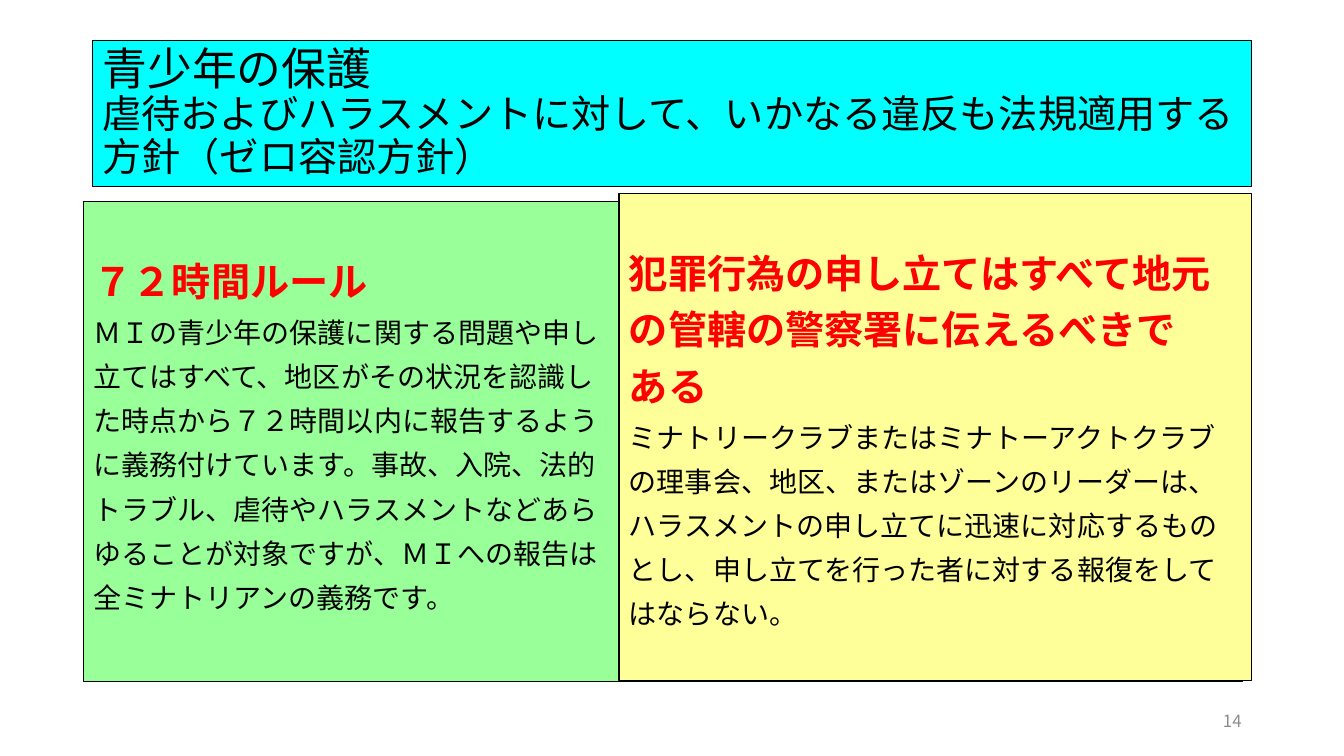
"""Build the youth protection slide with a title and two policy panels."""
from dataclasses import dataclass

from lxml.etree import SubElement
from pptx import Presentation
from pptx.dml.color import RGBColor
from pptx.enum.shapes import MSO_SHAPE
from pptx.enum.text import MSO_ANCHOR, MSO_AUTO_SIZE, PP_ALIGN
from pptx.oxml.ns import qn
from pptx.util import Cm, Pt

FONT = "Noto Sans CJK JP"
BLACK = RGBColor(0x00, 0x00, 0x00)
RED = RGBColor(0xFF, 0x00, 0x00)
CYAN = RGBColor(0x00, 0xFF, 0xFF)
GREEN = RGBColor(0x99, 0xFF, 0x99)
YELLOW = RGBColor(0xFF, 0xFF, 0x99)
GRAY = RGBColor(0x8C, 0x8C, 0x8C)


@dataclass(frozen=True)
class Panel:
    left: float
    top: float
    width: float
    height: float
    fill: RGBColor
    heading: tuple[str, ...]
    body: tuple[str, ...]


PANELS = (
    Panel(2.11, 5.08, 29.21, 12.09, GREEN, ("７２時間ルール",), (
        "ＭＩの青少年の保護に関する問題や申し",
        "立てはすべて、地区がその状況を認識し",
        "た時点から７２時間以内に報告するよう",
        "に義務付けています。事故、入院、法的",
        "トラブル、虐待やハラスメントなどあら",
        "ゆることが対象ですが、ＭＩへの報告は",
        "全ミナトリアンの義務です。",
    )),
    Panel(15.6, 4.88, 15.95, 12.27, YELLOW, (
        "犯罪行為の申し立てはすべて地元",
        "の管轄の警察署に伝えるべきで",
        "ある",
    ), (
        "ミナトリークラブまたはミナトーアクトクラブ",
        "の理事会、地区、またはゾーンのリーダーは、",
        "ハラスメントの申し立てに迅速に対応するもの",
        "とし、申し立てを行った者に対する報復をして",
        "はならない。",
    )),
)


def format_run(r, size: int, color: RGBColor, bold: bool = False) -> None:
    r.font.size = Pt(size)
    r.font.bold = bold
    r.font.color.rgb = color
    r.font.name = FONT
    SubElement(r.font._element, qn("a:ea"), typeface=FONT)


def format_box(sp, fill: RGBColor, anchor: MSO_ANCHOR) -> None:
    sp.fill.solid()
    sp.fill.fore_color.rgb = fill
    sp.line.color.rgb = BLACK
    sp.line.width = Pt(0.75)
    tf = sp.text_frame
    tf.word_wrap = True
    tf.auto_size = MSO_AUTO_SIZE.NONE
    tf.vertical_anchor = anchor


def fill_title(sp) -> None:
    sp.left, sp.top, sp.width, sp.height = Cm(2.33), Cm(1.01), Cm(29.21), Cm(3.68)
    format_box(sp, CYAN, MSO_ANCHOR.MIDDLE)
    sp.text_frame.text = (
        "青少年の保護\v"
        "虐待およびハラスメントに対して、いかなる違反も法規適用する方針（ゼロ容認方針）"
    )
    p = sp.text_frame.paragraphs[0]
    p.alignment = PP_ALIGN.LEFT
    p.line_spacing = 0.9
    for r, size in zip(p.runs, (32, 28)):
        format_run(r, size, BLACK)


def add_panel(slide, panel: Panel) -> None:
    sp = slide.shapes.add_shape(
        MSO_SHAPE.RECTANGLE,
        Cm(panel.left), Cm(panel.top), Cm(panel.width), Cm(panel.height),
    )
    sp.shadow.inherit = False
    format_box(sp, panel.fill, MSO_ANCHOR.TOP)
    tf = sp.text_frame
    tf.margin_top = Cm(1.54)
    tf.text = "\n".join(panel.heading + panel.body)
    for i, p in enumerate(tf.paragraphs):
        p.alignment = PP_ALIGN.LEFT
        p.line_spacing = 0.9
        p.space_before = Pt(10 if i else 0)
        if i < len(panel.heading):
            format_run(p.runs[0], 28, RED, bold=True)
        else:
            format_run(p.runs[0], 20, BLACK)


def add_page_number(slide, number: str) -> None:
    tf = slide.shapes.add_textbox(Cm(23.92), Cm(17.65), Cm(7.62), Cm(1.01)).text_frame
    tf.word_wrap = True
    tf.vertical_anchor = MSO_ANCHOR.MIDDLE
    tf.text = number
    p = tf.paragraphs[0]
    p.alignment = PP_ALIGN.RIGHT
    format_run(p.runs[0], 12, GRAY)


def main() -> None:
    prs = Presentation()
    prs.slide_width, prs.slide_height = Cm(33.87), Cm(19.05)
    slide = prs.slides.add_slide(prs.slide_layouts[5])
    fill_title(slide.shapes.title)
    for panel in PANELS:
        add_panel(slide, panel)
    add_page_number(slide, "14")
    prs.save("out.pptx")


if __name__ == "__main__":
    main()
